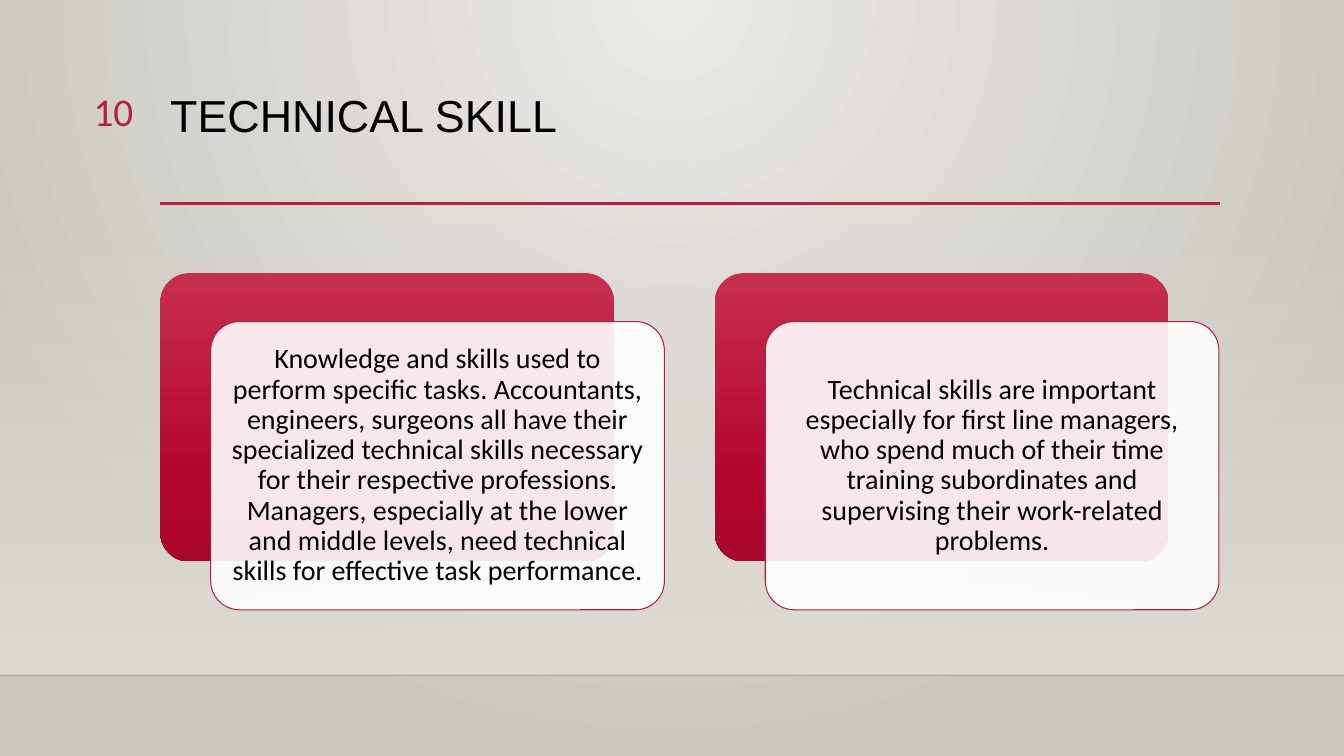
from pptx import Presentation
from pptx.dml.color import RGBColor
from pptx.enum.shapes import MSO_CONNECTOR, MSO_SHAPE
from pptx.enum.text import MSO_ANCHOR, PP_ALIGN
from pptx.oxml import parse_xml
from pptx.oxml.ns import nsdecls, qn
from pptx.oxml.xmlchemy import OxmlElement
from pptx.util import Inches, Pt

CRIMSON = RGBColor(0xB7, 0x1E, 0x42)
BLACK = RGBColor(0, 0, 0)
WHITE = RGBColor(0xFF, 0xFF, 0xFF)
STONE = RGBColor(0xDF, 0xDB, 0xD5)
STONE_LIGHT = RGBColor(0xEC, 0xEA, 0xE7)
STONE_DARK = RGBColor(0xCA, 0xC7, 0xC1)
RED_TOP = RGBColor(0xC7, 0x30, 0x4C)
RED_MIDDLE = RGBColor(0xB3, 0x06, 0x2F)
RED_BOTTOM = RGBColor(0xAA, 0x06, 0x2C)

DOWNWARD = '<a:lin ang="5400000" scaled="0"/>'
FROM_TOP_CENTRE = (
    '<a:path path="circle">'
    '<a:fillToRect l="43000" t="0" r="43000" b="100000"/></a:path>'
)
CARD_WIDTH, CARD_HEIGHT = 4.5, 2.86
CARD_LEFT, CARD_TOP, CARD_STEP = 1.59, 2.71, 5.5
PANEL_OFFSET_X, PANEL_OFFSET_Y = 0.5, 0.48
CARD_TEXTS = [
    "Knowledge and skills used to perform specific tasks. Accountants, "
    "engineers, surgeons all have their specialized technical skills "
    "necessary for their respective professions. Managers, especially at "
    "the lower and middle levels, need technical skills for effective task "
    "performance.",
    "Technical skills are important especially for first line managers, who "
    "spend much of their time training subordinates and supervising their "
    "work-related problems.",
]


def set_gradient(fill, owner, stops, direction):
    fill.gradient()
    stop_xml = "".join(
        f'<a:gs pos="{position * 1000}"><a:srgbClr val="{color}">'
        f'<a:alpha val="{opacity * 1000}"/></a:srgbClr></a:gs>'
        for position, color, opacity in stops
    )
    gradient = owner.find(".//" + qn("a:gradFill"))
    gradient.getparent().replace(gradient, parse_xml(
        f'<a:gradFill {nsdecls("a")} rotWithShape="1">'
        f"<a:gsLst>{stop_xml}</a:gsLst>{direction}</a:gradFill>"
    ))


def set_opacity(element, percent):
    alpha = OxmlElement("a:alpha")
    alpha.set("val", str(percent * 1000))
    element.find(".//" + qn("a:srgbClr")).append(alpha)


def add_box(slide, kind, left, top, width, height):
    shape = slide.shapes.add_shape(
        kind, Inches(left), Inches(top), Inches(width), Inches(height))
    shape.shadow.inherit = False
    shape.line.fill.background()
    if kind == MSO_SHAPE.ROUNDED_RECTANGLE:
        shape.adjustments[0] = 0.1
    return shape


def add_rule(slide, left, right, top, color, width):
    rule = slide.shapes.add_connector(
        MSO_CONNECTOR.STRAIGHT,
        Inches(left), Inches(top), Inches(right), Inches(top))
    rule.line.color.rgb = color
    rule.line.width = Pt(width)
    rule._element.spPr.append(OxmlElement("a:effectLst"))
    return rule


def add_text(slide, text, left, top, width, height, size, font="Calibri",
             color=BLACK, align=PP_ALIGN.LEFT):
    box = slide.shapes.add_textbox(
        Inches(left), Inches(top), Inches(width), Inches(height))
    frame = box.text_frame
    frame.word_wrap = True
    frame.text = text
    paragraph = frame.paragraphs[0]
    paragraph.alignment = align
    paragraph.line_spacing = 0.9
    paragraph.font.name = font
    paragraph.font.size = Pt(size)
    paragraph.font.color.rgb = color
    return frame


def add_card(slide, left, text):
    back = add_box(slide, MSO_SHAPE.ROUNDED_RECTANGLE,
                   left, CARD_TOP, CARD_WIDTH, CARD_HEIGHT)
    set_gradient(
        back.fill, back._element.spPr,
        [(0, RED_TOP, 100), (69, RED_MIDDLE, 100), (100, RED_BOTTOM, 100)],
        DOWNWARD)

    panel_left, panel_top = left + PANEL_OFFSET_X, CARD_TOP + PANEL_OFFSET_Y
    panel = add_box(slide, MSO_SHAPE.ROUNDED_RECTANGLE,
                    panel_left, panel_top, CARD_WIDTH, CARD_HEIGHT)
    panel.fill.solid()
    panel.fill.fore_color.rgb = WHITE
    set_opacity(panel._element.spPr, 90)
    panel.line.color.rgb = CRIMSON
    panel.line.width = Pt(0.75)

    inset = 0.08
    frame = add_text(slide, text, panel_left + inset, panel_top + inset,
                     CARD_WIDTH - 2 * inset, CARD_HEIGHT - 2 * inset,
                     20, align=PP_ALIGN.CENTER)
    frame.vertical_anchor = MSO_ANCHOR.MIDDLE
    frame.margin_left = frame.margin_right = Inches(inset)
    frame.margin_top = frame.margin_bottom = Inches(inset)


def main():
    presentation = Presentation()
    presentation.slide_width = Inches(13.33)
    presentation.slide_height = Inches(7.5)
    slide = presentation.slides.add_slide(presentation.slide_layouts[6])
    set_gradient(slide.background.fill, slide._element,
                 [(0, STONE_LIGHT, 100), (100, STONE_DARK, 100)],
                 FROM_TOP_CENTRE)

    wall = add_box(slide, MSO_SHAPE.RECTANGLE, 0, 2.21, 13.33, 4.49)
    set_gradient(wall.fill, wall._element.spPr,
                 [(0, STONE, 0), (100, STONE, 100)], DOWNWARD)
    floor_edge = add_rule(slide, 0, 13.33, 6.7, BLACK, 1)
    set_opacity(floor_edge._element.spPr, 20)
    add_rule(slide, 1.59, 12.1, 2.02, CRIMSON, 2.5)

    add_text(slide, "TECHNICAL SKILL", 1.59, 0.88, 10.5, 1.15, 32, "Arial")
    add_text(slide, "10", 0.53, 0.87, 0.89, 0.55, 28,
             color=CRIMSON, align=PP_ALIGN.RIGHT)
    for index, text in enumerate(CARD_TEXTS):
        add_card(slide, CARD_LEFT + index * CARD_STEP, text)

    presentation.save("out.pptx")


if __name__ == "__main__":
    main()
